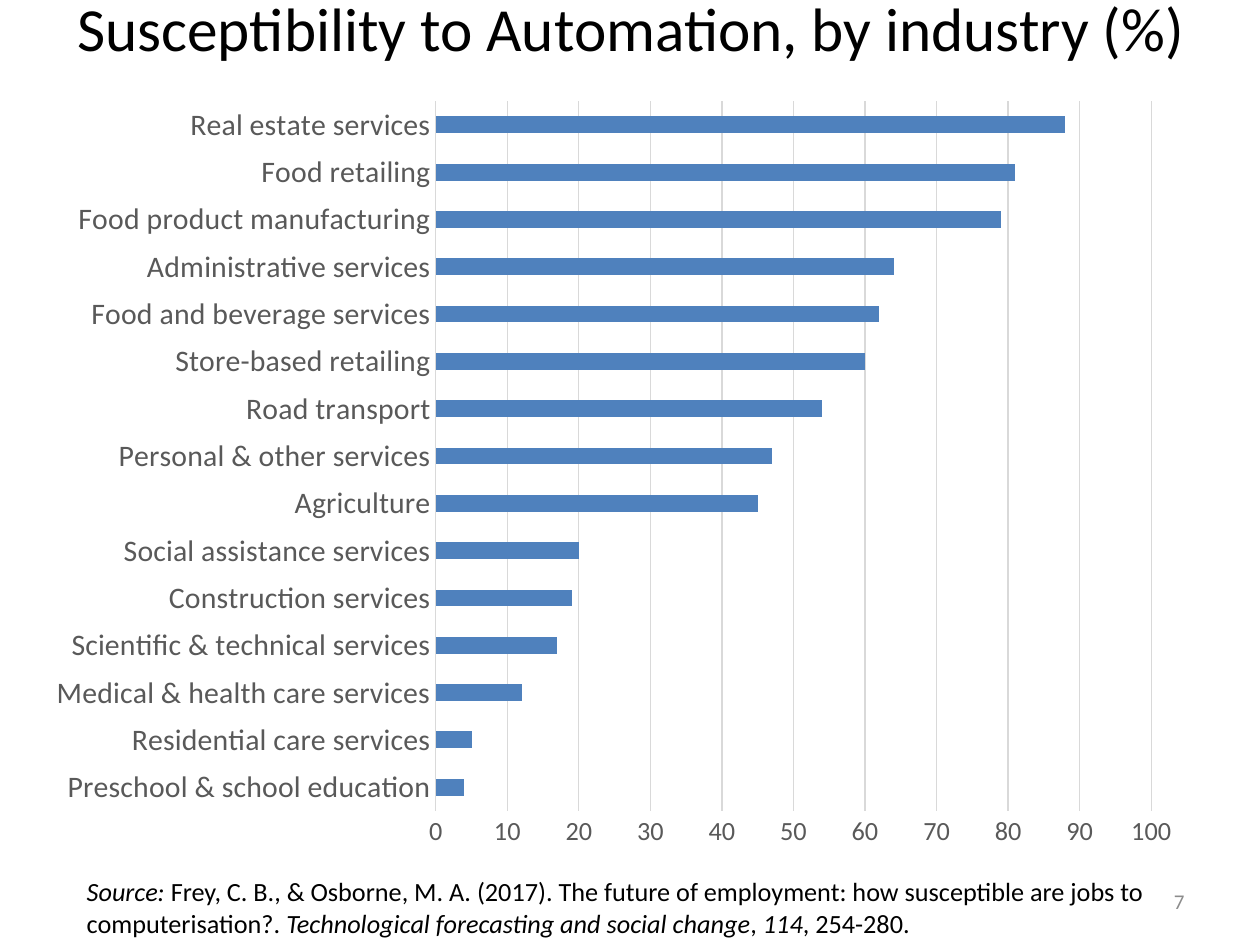
from pptx import Presentation
from pptx.chart.data import CategoryChartData
from pptx.dml.color import RGBColor
from pptx.enum.chart import XL_CHART_TYPE, XL_TICK_MARK
from pptx.enum.text import MSO_ANCHOR, PP_ALIGN
from pptx.oxml import parse_xml
from pptx.oxml.ns import nsdecls
from pptx.util import Inches, Pt

BAR = XL_CHART_TYPE.BAR_CLUSTERED
NO_TICK = XL_TICK_MARK.NONE
LEFT, CENTER, RIGHT = PP_ALIGN.LEFT, PP_ALIGN.CENTER, PP_ALIGN.RIGHT
TOP, MIDDLE = MSO_ANCHOR.TOP, MSO_ANCHOR.MIDDLE
COLUMNS, ROWS = 100, 75
TITLE_ONLY = 5
FONT = "Calibri"
COLORS = {"text": "000000", "number": "8C8C8C", "axis": "595959",
          "grid": "D9D9D9", "bar": "4F81BD"}

INDUSTRIES = {
    "Preschool & school education": 4,
    "Residential care services": 5,
    "Medical & health care services": 12,
    "Scientific & technical services": 17,
    "Construction services": 19,
    "Social assistance services": 20,
    "Agriculture": 45,
    "Personal & other services": 47,
    "Road transport": 54,
    "Store-based retailing": 60,
    "Food and beverage services": 62,
    "Administrative services": 64,
    "Food product manufacturing": 79,
    "Food retailing": 81,
    "Real estate services": 88,
}
SOURCE = [
    ("Source: ", True),
    ("Frey, C. B., & Osborne, M. A. (2017). The future of employment: "
     "how susceptible are jobs to computerisation?. ", False),
    ("Technological forecasting and social change", True),
    (", ", False),
    ("114", True),
    (", 254-280.", False),
]


def assign(target, values):
    """Set each named attribute of the target."""
    for name, value in values.items():
        setattr(target, name, value)


class SlideBuilder:
    """Holds the deck's style and the current slide, placed on a grid."""

    def __init__(self, deck):
        self.deck = deck
        self.page = deck.slides.add_slide(deck.slide_layouts[TITLE_ONLY])

    def area(self, column, row, columns, rows):
        """Turn grid cells into left, top, width and height."""
        across = self.deck.slide_width / COLUMNS
        down = self.deck.slide_height / ROWS
        return [round(value) for value in
                (column * across, row * down, columns * across, rows * down)]

    def style_font(self, font, size, color, italic=False):
        """Apply the deck's typeface with a size and a colour."""
        assign(font, {"name": FONT, "size": Pt(size), "bold": False, "italic": italic})
        font.color.rgb = RGBColor.from_string(COLORS[color])

    def style_line(self, line, color):
        """Draw a thin line in a named colour."""
        line.width = Pt(0.75)
        line.color.rgb = RGBColor.from_string(COLORS[color])

    def fill_text(self, box, spans, size, color, align, anchor, margin=0.1):
        """Fill one paragraph with plain and italic spans."""
        assign(box.text_frame, {"word_wrap": True, "vertical_anchor": anchor,
                                "margin_left": Inches(margin),
                                "margin_right": Inches(margin)})
        para = box.text_frame.paragraphs[0]
        para.alignment = align
        for text, italic in spans:
            span = para.add_run()
            span.text = text
            self.style_font(span.font, size, color, italic)

    def title(self, text, cells):
        """Move and fill the title placeholder."""
        box = self.page.shapes.title
        assign(box, dict(zip(("left", "top", "width", "height"), self.area(*cells))))
        self.fill_text(box, [(text, False)], 35, "text", CENTER, MIDDLE, margin=0)

    def text(self, spans, cells, size, color, align=LEFT, anchor=TOP):
        """Add a wrapped text box."""
        box = self.page.shapes.add_textbox(*self.area(*cells))
        self.fill_text(box, spans, size, color, align, anchor)

    def bar_chart(self, values, cells, plot):
        """Add a horizontal bar chart whose plot takes the given shares."""
        data = CategoryChartData()
        data.categories = list(values)
        data.add_series("Series 1", list(values.values()))
        chart = self.page.shapes.add_chart(BAR, *self.area(*cells), data).chart
        assign(chart, {"has_legend": False, "has_title": False})
        self.style_font(chart.font, 10, "text")
        bars = chart.plots[0]
        assign(bars, {"gap_width": 182, "vary_by_categories": False})
        fill = bars.series[0].format.fill
        fill.solid()
        fill.fore_color.rgb = RGBColor.from_string(COLORS["bar"])
        for axis, size in ((chart.category_axis, 17), (chart.value_axis, 15)):
            assign(axis, {"major_tick_mark": NO_TICK, "minor_tick_mark": NO_TICK})
            self.style_font(axis.tick_labels.font, size, "axis")
        chart.category_axis.has_major_gridlines = False
        self.style_line(chart.category_axis.format.line, "grid")
        assign(chart.value_axis, {"minimum_scale": 0, "maximum_scale": 100,
                                  "major_unit": 10, "has_major_gridlines": True})
        self.style_line(chart.value_axis.major_gridlines.format.line, "grid")
        chart.value_axis.format.line.fill.background()
        self.place_plot(chart, plot)

    def place_plot(self, chart, plot):
        """Fix the inner plot area as shares of the chart."""
        parts = "".join(f'<c:{name}Mode val="edge"/>' for name in "xy")
        parts += "".join(f'<c:{name} val="{share}"/>' for name, share in zip("xywh", plot))
        layout = parse_xml(f'<c:layout {nsdecls("c")}><c:manualLayout>'
                           f'<c:layoutTarget val="inner"/>{parts}'
                           f'</c:manualLayout></c:layout>')
        plot_area = chart.element.chart.plotArea if hasattr(chart, "element") \
            else chart.plots[0]._element.getparent()
        for old in plot_area.xpath("c:layout"):
            plot_area.remove(old)
        plot_area.insert(0, layout)


def main():
    """Build the automation slide."""
    deck = Presentation()
    assign(deck, {"slide_width": Inches(10), "slide_height": Inches(7.5)})
    slide = SlideBuilder(deck)
    slide.title("Susceptibility to Automation, by industry (%)", (5.1, -4.1, 90, 12.5))
    slide.text(SOURCE, (5.9, 69, 86.7, 6), 15, "text")
    slide.text([("7", False)], (71.7, 69.5, 23.3, 4), 12, "number", RIGHT, MIDDLE)
    slide.bar_chart(INDUSTRIES, (2, 6.8, 93.1, 61.9), (0.35, 0.02, 0.61, 0.91))
    deck.save("out.pptx")


if __name__ == "__main__":
    main()
